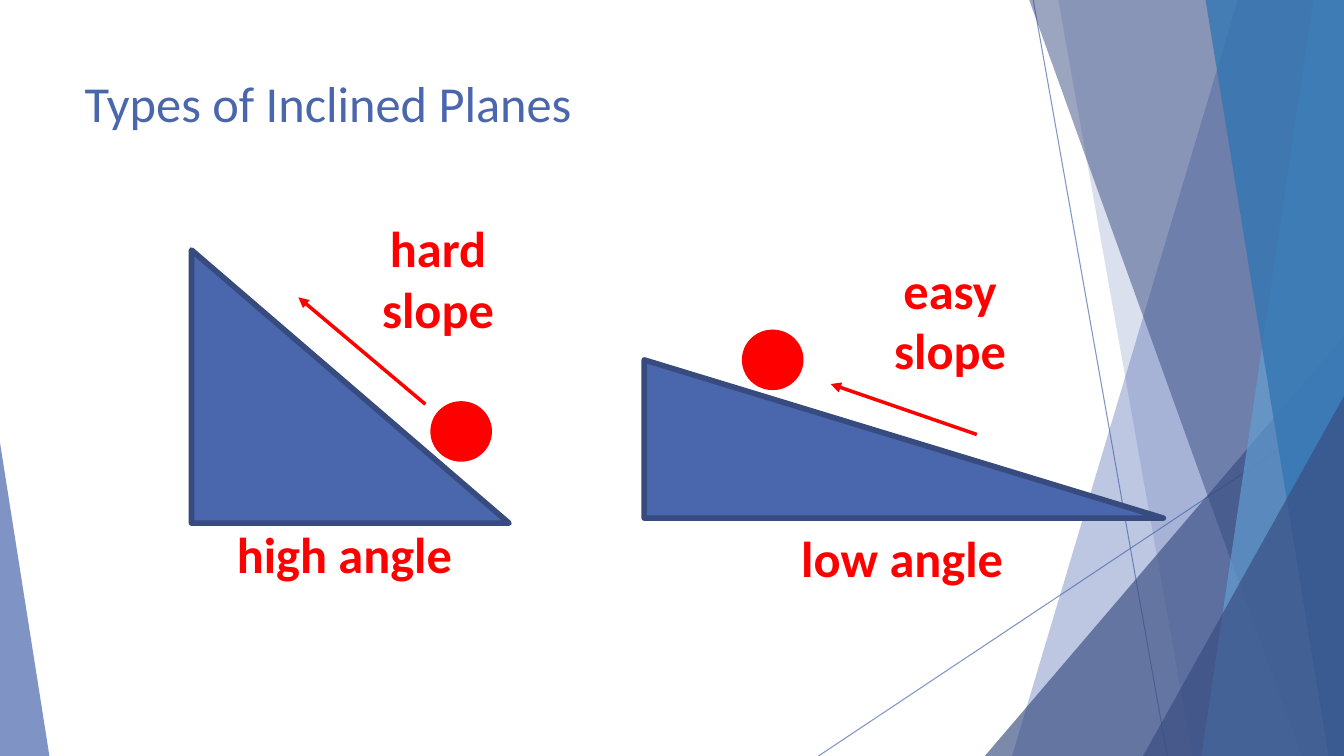
from lxml import etree
from pptx import Presentation
from pptx import util as u
from pptx.dml.color import RGBColor
from pptx.enum import shapes, text
from pptx.oxml import ns

# Grid of 100 columns by 100 rows
WIDTH, HEIGHT = u.Inches(13.333), u.Inches(7.5)
COLUMN, ROW = WIDTH / 100, HEIGHT / 100
FONT, TEXT_SIZE = "Calibri", 36
COLORS = {
    "blue": "4A66AC",
    "navy": "384C81",
    "sky": "629DD1",
    "ocean": "3477B2",
    "ramp_edge": "374B7F",
    "red": "FF0000",
}
BALL_SIZE = (4.43, 7.73)


def rgb(name):
    return RGBColor.from_string(COLORS[name])


def place(x, y):
    return round(x * COLUMN), round(y * ROW)


def paint(fill, color, opacity=100):
    fill.solid()
    fill.fore_color.rgb = rgb(color)
    if opacity < 100:
        tint = fill._xPr.find(".//" + ns.qn("a:srgbClr"))
        etree.SubElement(tint, ns.qn("a:alpha"), val=str(opacity * 1000))


def finish(shape, color, opacity=100, edge=None, edge_width=0):
    shape.shadow.inherit = False
    paint(shape.fill, color, opacity)
    if edge:
        paint(shape.line.fill, edge)
        shape.line.width = u.Pt(edge_width)
    else:
        shape.line.fill.background()


def add_figure(slide, kind, corner, size, *style, apex=None):
    figure = slide.shapes.add_shape(kind, *place(*corner), *place(*size))
    if apex is not None:
        figure.adjustments[0] = apex
    finish(figure, *style)


def add_panel(slide, top_left, bottom_left, color, opacity):
    """Full-height panel with a slanted left side."""
    outline = slide.shapes.build_freeform(*place(top_left, 0), scale=1.0)
    corners = [(100, 0), (100, 100), (bottom_left, 100)]
    outline.add_line_segments([place(*corner) for corner in corners], close=True)
    finish(outline.convert_to_shape(), color, opacity)


def add_line(slide, start, end, color, width, opacity=100, arrow=False):
    line = slide.shapes.add_connector(
        shapes.MSO_CONNECTOR.STRAIGHT, *place(*start), *place(*end))
    paint(line.line.fill, color, opacity)
    line.line.width = u.Pt(width)
    if arrow:
        etree.SubElement(line.line._get_or_add_ln(), ns.qn("a:tailEnd"), type="triangle")
    etree.SubElement(line._element.spPr, ns.qn("a:effectLst"))


def write(frame, words, color, bold, align):
    frame.vertical_anchor = text.MSO_ANCHOR.TOP
    paragraph = frame.paragraphs[0]
    paragraph.alignment = align
    run = paragraph.add_run()
    run.text = words
    run.font.name, run.font.size, run.font.bold = FONT, u.Pt(TEXT_SIZE), bold
    run.font.color.rgb = rgb(color)


def add_label(slide, words, corner, size, wrap):
    frame = slide.shapes.add_textbox(*place(*corner), *place(*size)).text_frame
    frame.word_wrap = wrap
    frame.auto_size = text.MSO_AUTO_SIZE.SHAPE_TO_FIT_TEXT
    align = text.PP_ALIGN.CENTER if wrap else text.PP_ALIGN.LEFT
    write(frame, words, "red", True, align)


def add_backdrop(slide):
    triangle = shapes.MSO_SHAPE.ISOSCELES_TRIANGLE
    add_line(slide, (76.88, 0), (86.85, 100), "blue", 0.75, 70)
    add_line(slide, (100, 53.73), (60.9, 100), "blue", 0.75, 70)
    add_panel(slide, 92.1, 75.3, "blue", 36)
    add_panel(slide, 78.75, 88.73, "blue", 20)
    add_figure(slide, triangle, (73.28, 44.4), (26.72, 55.6), "navy", 66, apex=1)
    add_panel(slide, 76.58, 96.83, "navy", 50)
    add_panel(slide, 97.73, 89.4, "sky", 70)
    add_panel(slide, 89.7, 98.85, "ocean", 80)
    add_figure(slide, triangle, (85.05, 52.4), (14.95, 47.6), "navy", 66, apex=1)
    add_figure(slide, triangle, (0, 58.53), (3.68, 41.47), "blue", 70, apex=0)


def add_title(slide, words):
    title = slide.shapes.title
    title.left, title.top = place(5.55, 8.93)
    title.width, title.height = place(70.5, 19.2)
    title.text_frame.auto_size = text.MSO_AUTO_SIZE.NONE
    write(title.text_frame, words, "blue", False, text.PP_ALIGN.LEFT)
    # Bring the title in front of the backdrop
    slide.shapes._spTree.append(title._element)


def add_plane(slide, ramp, ball, arrow, slope, angle):
    """Ramp with its ball, uphill arrow and two labels."""
    add_figure(slide, shapes.MSO_SHAPE.RIGHT_TRIANGLE, *ramp, "blue", 100, "ramp_edge", 4)
    add_line(slide, *arrow, "red", 2.5, arrow=True)
    add_figure(slide, shapes.MSO_SHAPE.OVAL, ball, BALL_SIZE, "red", 100, "red", 1.5)
    add_label(slide, *slope, (10.73, 17.47), True)
    add_label(slide, *angle, False)


def main():
    deck = Presentation()
    deck.slide_width, deck.slide_height = WIDTH, HEIGHT
    slide = deck.slides.add_slide(deck.slide_layouts[5])
    add_backdrop(slide)
    add_title(slide, "Types of Inclined Planes")

    # Steep plane
    add_plane(
        slide,
        ramp=((14.25, 33.07), (23.63, 36.13)),
        ball=(32.1, 53.2),
        arrow=((31.65, 53.47), (22.2, 39.33)),
        slope=("hard slope", (27.23, 28.13)),
        angle=("high angle", (16.88, 68.53), (17.7, 9.47)),
    )
    # Gentle plane
    add_plane(
        slide,
        ramp=((47.93, 47.6), (38.63, 20.93)),
        ball=(55.28, 43.73),
        arrow=((72.68, 57.47), (61.8, 50.8)),
        slope=("easy slope", (65.33, 33.6)),
        angle=("low angle", (58.88, 69.07), (16.73, 9.47)),
    )
    deck.save("out.pptx")


if __name__ == "__main__":
    main()
